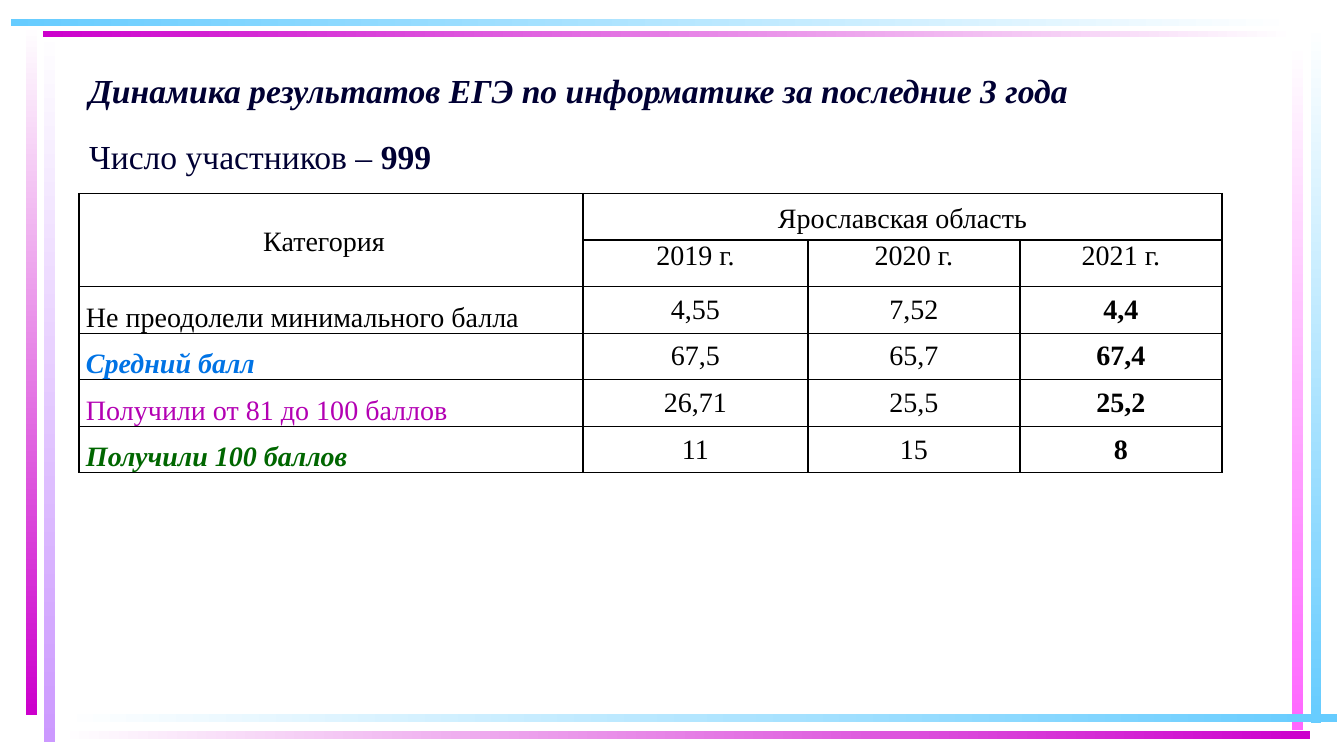
from dataclasses import dataclass

from lxml import etree
from pptx import Presentation
from pptx.dml.color import RGBColor
from pptx.enum.shapes import MSO_SHAPE
from pptx.enum.text import MSO_ANCHOR, PP_ALIGN
from pptx.oxml.ns import qn
from pptx.util import Emu, Pt

RECTANGLE = MSO_SHAPE.RECTANGLE
TOP, MIDDLE, BOTTOM = MSO_ANCHOR.TOP, MSO_ANCHOR.MIDDLE, MSO_ANCHOR.BOTTOM
LEFT, CENTER = PP_ALIGN.LEFT, PP_ALIGN.CENTER

EMU_PER_PX = 914400 / 100.8
FONT = "Times New Roman"
COLORS = {
    "white": "FFFFFF", "black": "000000", "navy": "000033",
    "lilac": "CC99FF", "magenta": "CC00CC", "pink": "FF66FF", "sky": "66CCFF",
    "blue": "0073E5", "purple": "B300B3", "green": "006600",
}
COLUMN_WIDTHS = (504, 225, 212, 202)
ROW_COUNT = 7
TABLE_HEIGHT = 326
CELL_MARGIN = 7


@dataclass(frozen=True)
class Bar:
    left: int
    top: int
    width: int
    height: int
    start: str
    end: str


@dataclass(frozen=True)
class ResultRow:
    label: str
    values: tuple[str, str, str]
    color: str = "black"
    emphasis: bool = False


BARS = (
    Bar(44, 28, 11, 714, "white", "lilac"),
    Bar(26, 25, 11, 690, "white", "magenta"),
    Bar(1311, 24, 10, 699, "white", "sky"),
    Bar(1292, 42, 11, 688, "white", "pink"),
    Bar(60, 714, 1277, 8, "white", "sky"),
    Bar(60, 731, 1250, 8, "white", "magenta"),
    Bar(43, 31, 1253, 6, "magenta", "white"),
    Bar(11, 19, 1285, 7, "sky", "white"),
)
YEARS = ("2019 г.", "2020 г.", "2021 г.")
RESULTS = (
    ResultRow("Не преодолели минимального балла", ("4,55", "7,52", "4,4")),
    ResultRow("Средний балл", ("67,5", "65,7", "67,4"), "blue", True),
    ResultRow("Получили от 81 до 100 баллов", ("26,71", "25,5", "25,2"), "purple"),
    ResultRow("Получили 100 баллов", ("11", "15", "8"), "green", True),
)


def px(length: int) -> Emu:
    return Emu(round(length * EMU_PER_PX))


def rgb(name: str) -> RGBColor:
    return RGBColor.from_string(COLORS[name])


def style_font(font, size: int, color: str, bold: bool = False, italic: bool = False) -> None:
    font.name = FONT
    font.size = Pt(size)
    font.color.rgb = rgb(color)
    font.bold = bold
    font.italic = italic


def add_bar(page, bar: Bar) -> None:
    shape = page.shapes.add_shape(
        RECTANGLE, px(bar.left), px(bar.top), px(bar.width), px(bar.height))
    shape.shadow.inherit = False
    shape.line.fill.background()
    shape.fill.gradient()
    # Angles run counter-clockwise, so 270 points down.
    shape.fill.gradient_angle = 270 if bar.height > bar.width else 0
    for stop, color in zip(shape.fill.gradient_stops, (bar.start, bar.end)):
        stop.color.rgb = rgb(color)


def add_heading(page) -> None:
    box = page.shapes.add_textbox(px(79), px(44), px(1142), px(205))
    frame = box.text_frame
    frame.word_wrap = True
    frame.vertical_anchor = TOP
    frame.margin_left = frame.margin_right = px(10)
    frame.margin_top = px(34)

    title = frame.paragraphs[0]
    title.text = "Динамика результатов ЕГЭ по информатике за последние 3 года"
    style_font(title.font, 24, "navy", bold=True, italic=True)
    title.line_spacing = 0.8

    participants = frame.add_paragraph()
    style_font(participants.font, 24, "navy")
    participants.line_spacing = 0.8
    participants.space_before = Pt(24)
    participants.add_run().text = "Число участников – "
    count = participants.add_run()
    count.text = "999"
    count.font.bold = True


def set_borders(cell, visible_sides: str) -> None:
    """Draw black lines on the given sides (of L, R, T, B) and none elsewhere."""
    properties = cell._tc.get_or_add_tcPr()
    for position, side in enumerate("LRTB"):
        line = etree.Element(qn(f"a:ln{side}"), w=str(Pt(1)))
        if side in visible_sides:
            fill = etree.SubElement(line, qn("a:solidFill"))
            etree.SubElement(fill, qn("a:srgbClr"), val=COLORS["black"])
        else:
            etree.SubElement(line, qn("a:noFill"))
        properties.insert(position, line)


def write_cell(cell, text: str, anchor=MIDDLE, align=CENTER, spacing: float = 1.0,
               color: str = "black", bold: bool = False, italic: bool = False) -> None:
    cell.vertical_anchor = anchor
    cell.margin_left = cell.margin_right = px(CELL_MARGIN)
    cell.margin_top = cell.margin_bottom = 0
    para = cell.text_frame.paragraphs[0]
    para.text = text
    para.alignment = align
    para.line_spacing = spacing
    style_font(para.font, 20, color, bold, italic)


def add_results_table(page) -> None:
    frame = page.shapes.add_table(
        ROW_COUNT, len(COLUMN_WIDTHS), px(79), px(147),
        px(sum(COLUMN_WIDTHS)), px(TABLE_HEIGHT))
    table = frame.table
    table.first_row = table.horz_banding = False
    for column, width in zip(table.columns, COLUMN_WIDTHS):
        column.width = px(width)
    for index, row in enumerate(table.rows):
        row.height = Emu(px(TABLE_HEIGHT) // ROW_COUNT)
        for cell in row.cells:
            cell.fill.background()
            set_borders(cell, "LRTB" if index else "B")

    table.cell(0, 1).merge(table.cell(0, 3))
    table.cell(1, 0).merge(table.cell(2, 0))
    table.cell(1, 1).merge(table.cell(1, 3))

    category = table.cell(1, 0)
    write_cell(category, "Категория", spacing=1.15)
    category.margin_right = px(3 * CELL_MARGIN)
    write_cell(table.cell(1, 1), "Ярославская область", spacing=1.15)
    for column, year in enumerate(YEARS, start=1):
        write_cell(table.cell(2, column), year, anchor=TOP)

    for index, result in enumerate(RESULTS, start=3):
        write_cell(table.cell(index, 0), result.label, BOTTOM, LEFT, 1.15,
                   result.color, result.emphasis, result.emphasis)
        for column, value in enumerate(result.values, start=1):
            write_cell(table.cell(index, column), value, bold=column == len(YEARS))


def main() -> None:
    deck = Presentation()
    deck.slide_width, deck.slide_height = px(1344), px(756)
    page = deck.slides.add_slide(deck.slide_layouts[6])
    for bar in BARS:
        add_bar(page, bar)
    add_heading(page)
    add_results_table(page)
    deck.save("out.pptx")


if __name__ == "__main__":
    main()
